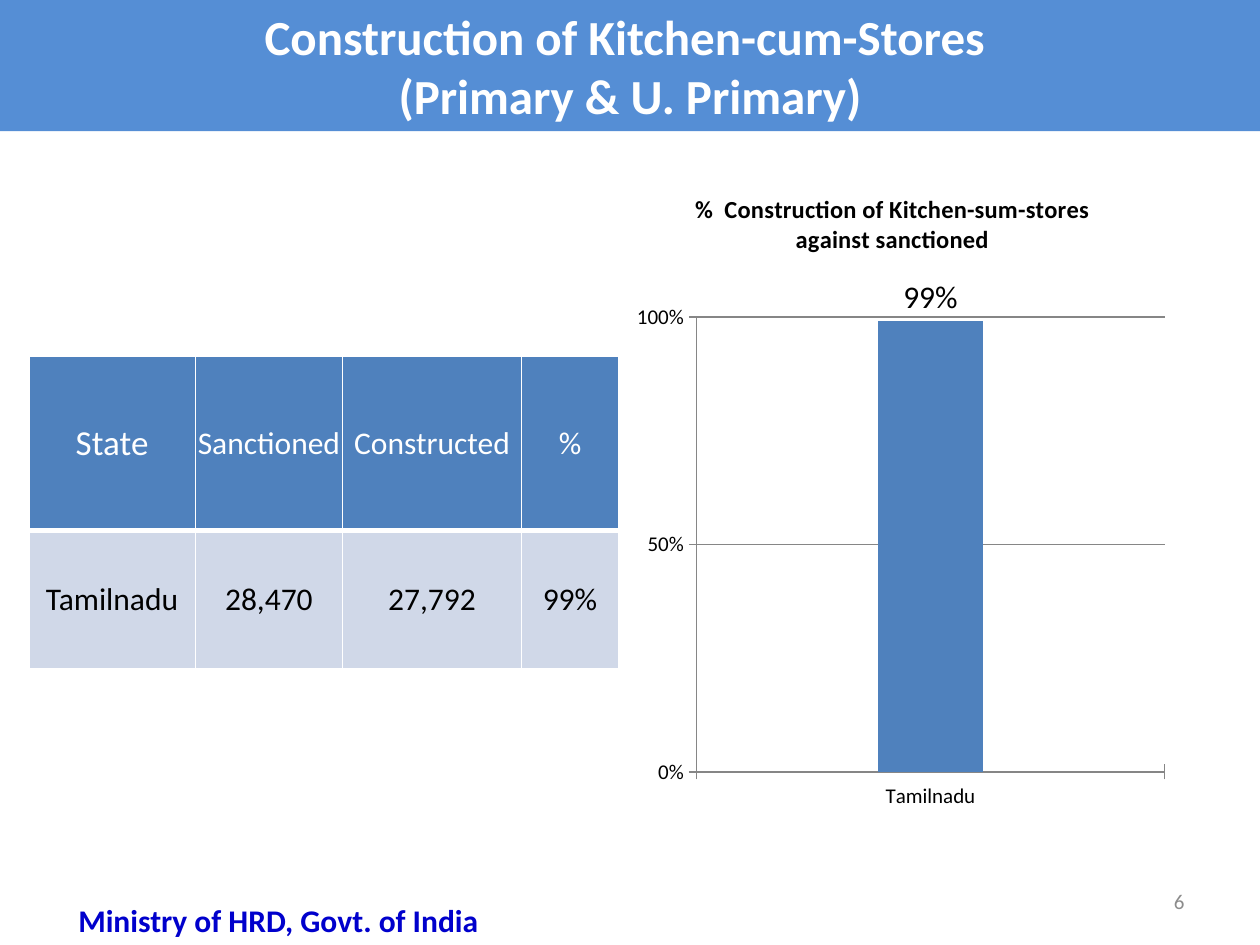
from lxml import etree
from pptx import Presentation
from pptx.chart.data import CategoryChartData
from pptx.dml.color import RGBColor
from pptx.enum.chart import XL_CHART_TYPE, XL_LABEL_POSITION, XL_TICK_MARK
from pptx.enum.text import MSO_ANCHOR, PP_ALIGN
from pptx.oxml.ns import qn
from pptx.util import Inches, Pt

CENTER, RIGHT = PP_ALIGN.CENTER, PP_ALIGN.RIGHT
TOP, MIDDLE = MSO_ANCHOR.TOP, MSO_ANCHOR.MIDDLE
COLUMN = XL_CHART_TYPE.COLUMN_CLUSTERED
OUTSIDE_END = XL_LABEL_POSITION.OUTSIDE_END
CROSS, NONE = XL_TICK_MARK.CROSS, XL_TICK_MARK.NONE
COLORS = {
    "banner": "558ED5", "white": "FFFFFF", "black": "000000", "blue": "4F81BD",
    "pale": "D0D8E8", "axis": "868686", "number": "8C8C8C", "footer": "0000CC",
}


class SlideBuilder:
    """Hold the style and the current page, and add each kind of element."""

    def __init__(self, page, font="Calibri"):
        self.page = page
        self.font = font

    def color(self, name):
        return RGBColor.from_string(COLORS[name])

    def style_font(self, font, size, color, bold=False):
        font.name = self.font
        font.size = Pt(size)
        font.bold = bold
        font.color.rgb = self.color(color)

    def style_text(self, frame, size, color, bold=False, align=CENTER):
        for para in frame.paragraphs:
            para.alignment = align
            for span in para.runs:
                self.style_font(span.font, size, color, bold)

    def title(self, text, left, top, width, height):
        box = self.page.shapes.title
        box.left, box.top = Inches(left), Inches(top)
        box.width, box.height = Inches(width), Inches(height)
        box.fill.solid()
        box.fill.fore_color.rgb = self.color("banner")
        box.text_frame.text = text
        box.text_frame.vertical_anchor = MIDDLE
        self.style_text(box.text_frame, 28, "white", bold=True)

    def text(self, text, left, top, width, height, size, color,
             bold=False, align=CENTER, anchor=TOP):
        box = self.page.shapes.add_textbox(
            Inches(left), Inches(top), Inches(width), Inches(height))
        frame = box.text_frame
        frame.word_wrap = True
        frame.vertical_anchor = anchor
        frame.text = text
        self.style_text(frame, size, color, bold, align)

    def border(self, cell, side, width):
        properties = cell._tc.get_or_add_tcPr()
        line = etree.SubElement(properties, qn(f"a:ln{side}"), w=str(Pt(width)))
        fill = etree.SubElement(line, qn("a:solidFill"))
        etree.SubElement(fill, qn("a:srgbClr"), val=COLORS["white"])

    def table(self, rows, left, top, widths, heights):
        table = self.page.shapes.add_table(
            len(rows), len(widths), Inches(left), Inches(top),
            Inches(sum(widths)), Inches(sum(heights))).table
        for column, width in zip(table.columns, widths):
            column.width = Inches(width)
        for index, (row, height) in enumerate(zip(table.rows, heights)):
            row.height = Inches(height)
            header = index == 0
            for position, (cell, text) in enumerate(zip(row.cells, rows[index])):
                cell.margin_left = cell.margin_right = Inches(0.01)
                cell.margin_top = cell.margin_bottom = 0
                cell.vertical_anchor = MIDDLE
                for side in "LRTB":
                    thick = side == ("B" if header else "T")
                    self.border(cell, side, 3 if thick else 1)
                cell.fill.solid()
                cell.fill.fore_color.rgb = self.color("blue" if header else "pale")
                cell.text_frame.text = text
                size = 20 if header and position == 0 else 18
                self.style_text(cell.text_frame, size, "white" if header else "black")

    def plot_layout(self, chart, **place):
        plot_area = chart._chartSpace.chart.plotArea
        for old in plot_area.findall(qn("c:layout")):
            plot_area.remove(old)
        layout = etree.Element(qn("c:layout"))
        manual = etree.SubElement(layout, qn("c:manualLayout"))
        settings = {"layoutTarget": "inner", "xMode": "edge", "yMode": "edge", **place}
        for name, value in settings.items():
            etree.SubElement(manual, qn(f"c:{name}"), val=str(value))
        plot_area.insert(0, layout)

    def chart(self, title, categories, values, left, top, width, height):
        data = CategoryChartData(number_format="0%")
        data.categories = categories
        data.add_series("Series 1", values)
        chart = self.page.shapes.add_chart(
            COLUMN, Inches(left), Inches(top), Inches(width), Inches(height), data).chart
        self.style_font(chart.font, 18, "black")
        chart.has_legend = False
        chart.has_title = True
        chart.chart_title.text_frame.text = title
        self.style_text(chart.chart_title.text_frame, 14, "black", bold=True)
        self.plot_layout(chart, x=0.14, y=0.22, w=0.86, h=0.67)

        value_axis = chart.value_axis
        value_axis.minimum_scale, value_axis.maximum_scale = 0, 1
        value_axis.major_unit = 0.5
        value_axis.has_major_gridlines = True
        value_axis.tick_labels.number_format = "0%"
        value_axis.tick_labels.number_format_is_linked = False
        for axis in (chart.category_axis, value_axis):
            self.style_font(axis.tick_labels.font, 12, "black")
            axis.major_tick_mark, axis.minor_tick_mark = CROSS, NONE
        for part in (chart.category_axis, value_axis, value_axis.major_gridlines):
            part.format.line.color.rgb = self.color("axis")
            part.format.line.width = Pt(0.75)

        plot = chart.plots[0]
        plot.gap_width = 349
        plot.vary_by_categories = False
        fill = plot.series[0].format.fill
        fill.solid()
        fill.fore_color.rgb = self.color("blue")
        plot.has_data_labels = True
        labels = plot.data_labels
        labels.show_value = True
        labels.number_format = "0%"
        labels.number_format_is_linked = False
        labels.position = OUTSIDE_END
        self.style_font(labels.font, 18, "black")


def main():
    deck = Presentation()
    deck.slide_width, deck.slide_height = Inches(10), Inches(7.5)
    builder = SlideBuilder(deck.slides.add_slide(deck.slide_layouts[5]))
    builder.title("Construction of Kitchen-cum-Stores \n(Primary & U. Primary)",
                  0, 0, 10, 1.04)
    builder.table(
        [["State", "Sanctioned", "Constructed", "%"],
         ["Tamilnadu", "28,470", "27,792", "99%"]],
        0.23, 2.83, widths=[1.32, 1.17, 1.42, 0.77], heights=[1.38, 1.1])
    builder.chart("%  Construction of Kitchen-sum-stores against sanctioned",
                  ["Tamilnadu"], [0.99], 4.92, 1.33, 4.33, 5.39)
    builder.text("6", 7.17, 6.95, 2.33, 0.4, 12, "number", align=RIGHT, anchor=MIDDLE)
    builder.text("Ministry of HRD, Govt. of India", 0.25, 7.1, 3.92, 0.4,
                 18, "footer", bold=True)
    deck.save("out.pptx")


if __name__ == "__main__":
    main()
